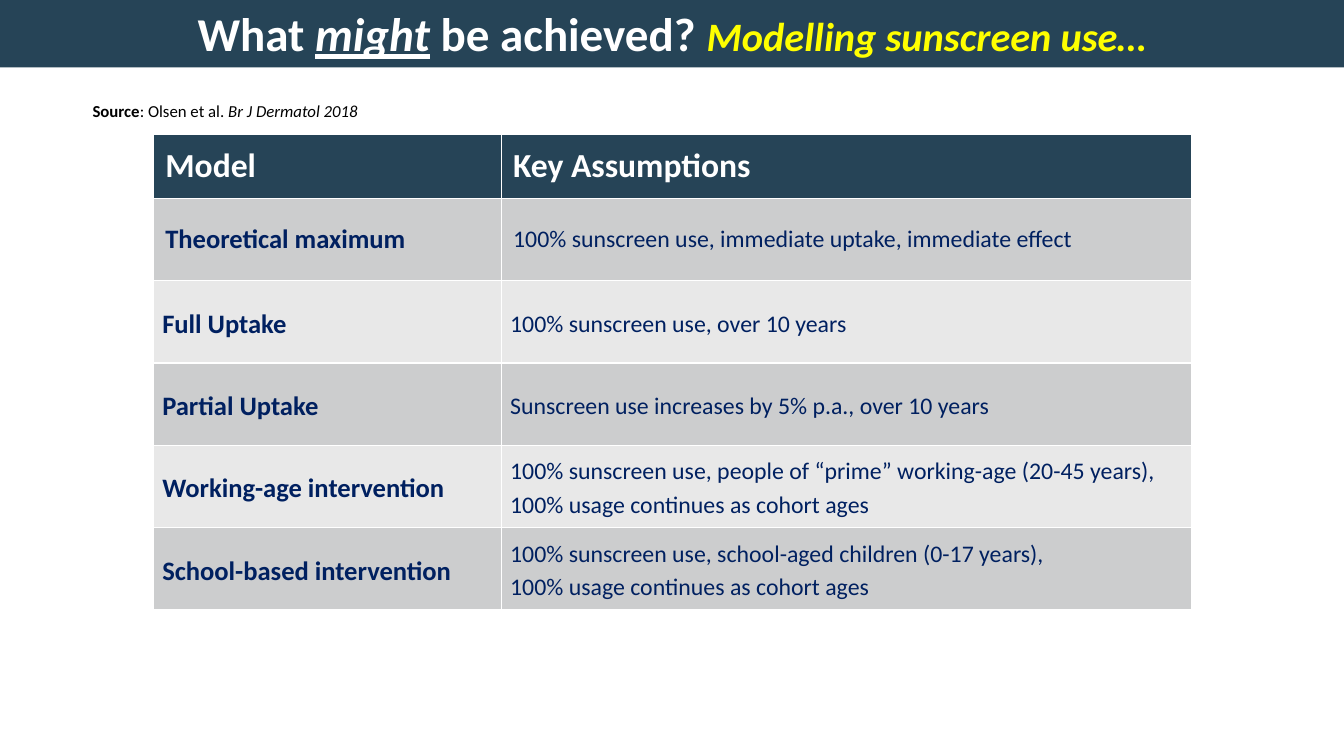
from pptx import Presentation
from pptx.dml.color import RGBColor
from pptx.enum.shapes import MSO_SHAPE
from pptx.enum.text import MSO_ANCHOR, PP_ALIGN
from pptx.util import Inches, Pt

RECTANGLE = MSO_SHAPE.RECTANGLE
MIDDLE, TOP = MSO_ANCHOR.MIDDLE, MSO_ANCHOR.TOP
CENTER, RIGHT = PP_ALIGN.CENTER, PP_ALIGN.RIGHT

FONT = "Calibri"
TEAL, NAVY, WHITE, YELLOW, BLACK = "264457", "002060", "FFFFFF", "FFFF00", "000000"
DARK_BAND, LIGHT_BAND = "CCCDCE", "E8E8E8"

HEADINGS = ("Model", "Key Assumptions")
MODELS = [
    ("Theoretical maximum", "100% sunscreen use, immediate uptake, immediate effect"),
    ("Full Uptake", "100% sunscreen use, over 10 years"),
    ("Partial Uptake", "Sunscreen use increases by 5% p.a., over 10 years"),
    ("Working-age intervention",
     "100% sunscreen use, people of “prime” working-age (20-45 years), "
     "100% usage continues as cohort ages"),
    ("School-based intervention",
     "100% sunscreen use, school-aged children (0-17 years),\n"
     "100% usage continues as cohort ages"),
]


def color(hex_string):
    return RGBColor.from_string(hex_string)


def set_font(font, size, hex_string, bold):
    font.name, font.size, font.bold = FONT, Pt(size), bold
    font.color.rgb = color(hex_string)


def set_margins(target, horizontal, vertical):
    target.margin_left = target.margin_right = Inches(horizontal)
    target.margin_top = target.margin_bottom = Inches(vertical)


def add_panel(page, box, fill, margins, alignment):
    """Add a plain filled rectangle and return its one paragraph."""
    panel = page.shapes.add_shape(RECTANGLE, *(Inches(side) for side in box))
    panel.shadow.inherit = False
    panel.fill.solid()
    panel.fill.fore_color.rgb = color(fill)
    panel.line.fill.background()
    frame = panel.text_frame
    frame.word_wrap = True
    frame.vertical_anchor = TOP
    set_margins(frame, *margins)
    para = frame.paragraphs[0]
    para.alignment = alignment
    return para


def add_span(para, text):
    span = para.add_run()
    span.text = text
    return span.font


def add_title(page, box):
    para = add_panel(page, box, TEAL, (0.1, 0.05), CENTER)
    set_font(para.font, 33.6, WHITE, True)
    add_span(para, "What ")
    emphasis = add_span(para, "might")
    emphasis.italic = emphasis.underline = True
    add_span(para, " be achieved? ")
    subtitle = add_span(para, "Modelling sunscreen use…")
    subtitle.size, subtitle.italic = Pt(28.8), True
    subtitle.color.rgb = color(YELLOW)


def add_source(page, box):
    para = add_panel(page, box, WHITE, (0.05, 0.05), RIGHT)
    set_font(para.font, 12, BLACK, False)
    add_span(para, "Source").bold = True
    add_span(para, ": Olsen et al. ")
    add_span(para, "Br J Dermatol 2018").italic = True


def fill_cell(cell, text, fill, size, ink, bold, roomy):
    cell.fill.solid()
    cell.fill.fore_color.rgb = color(fill)
    cell.vertical_anchor = MIDDLE
    set_margins(cell, *((0.12, 0.06) if roomy else (0.09, 0)))
    cell.text_frame.text = text
    for para in cell.text_frame.paragraphs:
        set_font(para.font, size, ink, bold)
        if not roomy:
            para.line_spacing = 1.15


def add_models_table(page, box):
    left, top, width, height = box
    header_height, model_width = 0.64, 3.45
    row_height = (height - header_height) / len(MODELS)
    # The default table style supplies the white cell borders
    table = page.shapes.add_table(
        len(MODELS) + 1, 2, *(Inches(side) for side in box)).table
    table.columns[0].width = Inches(model_width)
    table.columns[1].width = Inches(width - model_width)

    # Header row
    table.rows[0].height = Inches(header_height)
    for column, heading in enumerate(HEADINGS):
        fill_cell(table.cell(0, column), heading, TEAL, 24, WHITE, True, True)

    # Banded model rows; the first keeps the header's margins
    for row, (model, assumptions) in enumerate(MODELS, start=1):
        table.rows[row].height = Inches(row_height)
        band = DARK_BAND if row % 2 else LIGHT_BAND
        roomy = row == 1
        fill_cell(table.cell(row, 0), model, band, 19, NAVY, True, roomy)
        fill_cell(table.cell(row, 1), assumptions, band, 17, NAVY, False, roomy)


def main():
    deck = Presentation()
    deck.slide_width, deck.slide_height = Inches(13.33), Inches(7.5)
    page = deck.slides.add_slide(deck.slide_layouts[6])
    add_models_table(page, (1.52, 1.33, 10.3, 4.72))
    add_title(page, (0, 0, 13.33, 0.67))
    add_source(page, (0.75, 0.95, 2.85, 0.3))
    deck.save("out.pptx")


if __name__ == "__main__":
    main()
